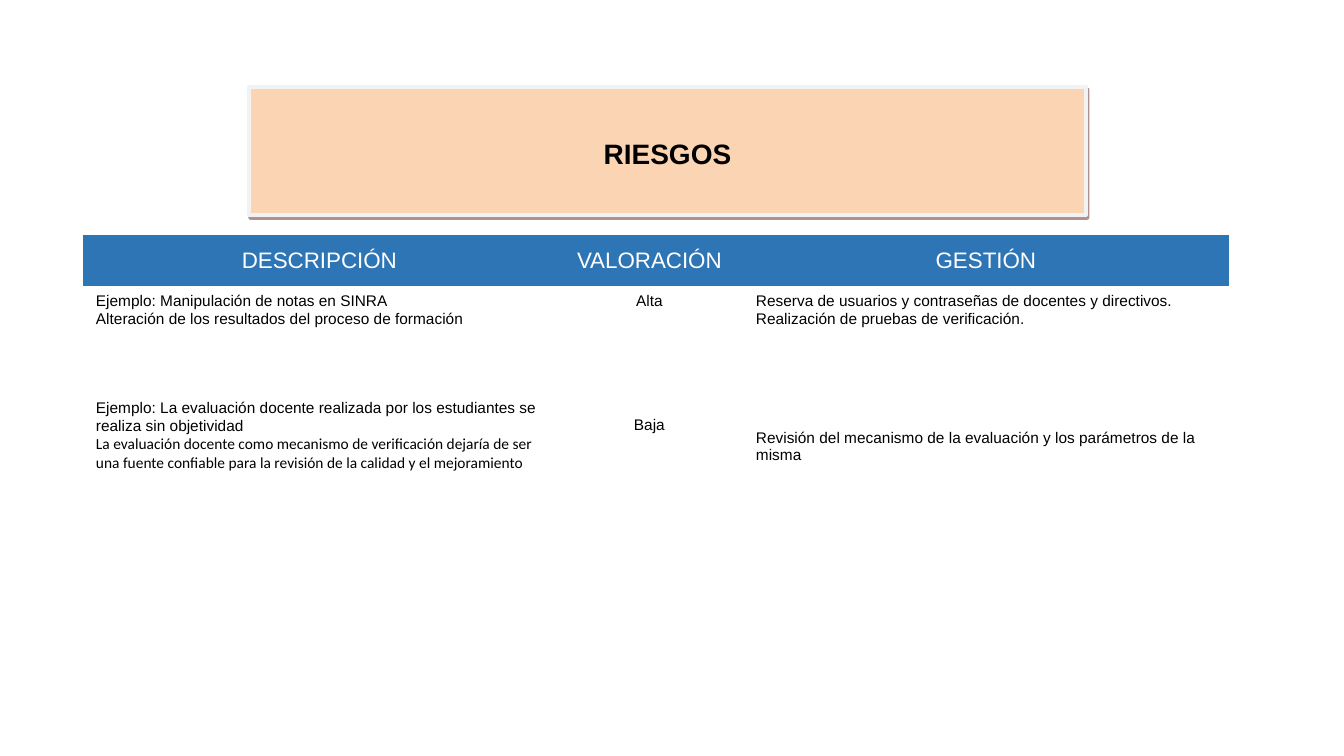
import pptx
import pptx.dml.color
import pptx.enum.text
import pptx.oxml
import pptx.oxml.ns
import pptx.util

PX = 914400 / 100.8
CENTER = pptx.enum.text.PP_ALIGN.CENTER
LEFT = pptx.enum.text.PP_ALIGN.LEFT
TOP = pptx.enum.text.MSO_ANCHOR.TOP
MIDDLE = pptx.enum.text.MSO_ANCHOR.MIDDLE
NO_GRID_STYLE = "{2D5ABB26-0587-4C30-8999-92F81FD0307C}"
COLUMN_WIDTHS = [473, 187, 486]
ROW_HEIGHTS = [51, 107, 107]
HEADINGS = ["DESCRIPCIÓN", "VALORACIÓN", "GESTIÓN"]
RISKS = [
    [
        [("Ejemplo: Manipulación de notas en SINRA", "Arial"),
         ("Alteración de los resultados del proceso de formación", "Arial")],
        [("Alta", "Arial")],
        [("Reserva de usuarios y contraseñas de docentes y directivos.", "Arial"),
         ("Realización de pruebas de verificación.", "Arial")],
    ],
    [
        [("Ejemplo: La evaluación docente realizada por los estudiantes se realiza sin objetividad", "Arial"),
         ("La evaluación docente como mecanismo de verificación dejaría de ser una fuente "
          "confiable para la revisión de la calidad y el mejoramiento", "Calibri")],
        [("Baja", "Arial")],
        [("Revisión del mecanismo de la evaluación y los parámetros de la misma", "Arial")],
    ],
]


def px(length):
    return pptx.util.Emu(round(length * PX))


def color(value):
    return pptx.dml.color.RGBColor.from_string(value)


def write(frame, lines, size=11, ink="000000", bold=False, align=LEFT, spacing=1.0):
    for index, (text, font) in enumerate(lines):
        paragraph = frame.paragraphs[0] if index == 0 else frame.add_paragraph()
        paragraph.alignment = align
        paragraph.line_spacing = spacing
        run = paragraph.add_run()
        run.text = text
        run.font.name = font
        run.font.size = pptx.util.Pt(size)
        run.font.bold = bold
        run.font.color.rgb = color(ink)


def add_banner(slide, left, top, width, height):
    banner = slide.shapes.title
    banner.left, banner.top, banner.width, banner.height = map(px, (left, top, width, height))
    banner.fill.solid()
    banner.fill.fore_color.rgb = color("FBD4B4")
    banner.line.color.rgb = color("F2F2F2")
    banner.line.width = pptx.util.Pt(3)
    shadow = pptx.oxml.parse_xml(
        f'<a:effectLst {pptx.oxml.ns.nsdecls("a")}>'
        '<a:outerShdw blurRad="0" dist="28000" dir="3800000" algn="ctr" rotWithShape="0">'
        '<a:srgbClr val="632423"><a:alpha val="49000"/></a:srgbClr>'
        '</a:outerShdw></a:effectLst>')
    banner.element.spPr.append(shadow)
    frame = banner.text_frame
    frame.word_wrap = True
    frame.auto_size = pptx.enum.text.MSO_AUTO_SIZE.NONE
    frame.vertical_anchor = MIDDLE
    frame.margin_left = frame.margin_right = px(10)
    frame.margin_top = frame.margin_bottom = px(5)
    write(frame, [("RIESGOS", "Arial")], size=20, bold=True, align=CENTER, spacing=1.15)


def fill_cell(cell, lines, fill=None, anchor=TOP, top=7, **text_format):
    cell.margin_left = cell.margin_right = px(13)
    cell.margin_top, cell.margin_bottom = px(top), px(7)
    cell.vertical_anchor = anchor
    if fill:
        cell.fill.solid()
        cell.fill.fore_color.rgb = color(fill)
    else:
        cell.fill.background()
    write(cell.text_frame, lines, **text_format)


def add_risk_table(slide, left, top):
    frame = slide.shapes.add_table(
        len(ROW_HEIGHTS), len(COLUMN_WIDTHS), px(left), px(top),
        px(sum(COLUMN_WIDTHS)), px(sum(ROW_HEIGHTS)))
    risks = frame.table
    frame.element.find(".//" + pptx.oxml.ns.qn("a:tableStyleId")).text = NO_GRID_STYLE
    risks.horz_banding = False
    for column, width in zip(risks.columns, COLUMN_WIDTHS):
        column.width = px(width)
    for row, height in zip(risks.rows, ROW_HEIGHTS):
        row.height = px(height)
    for column, heading in enumerate(HEADINGS):
        fill_cell(risks.cell(0, column), [(heading, "Arial")], fill="2E75B5",
                  anchor=MIDDLE, size=16, ink="FFFFFF", align=CENTER)
    for row, (description, rating, response) in enumerate(RISKS, 1):
        last = row == len(RISKS)
        fill_cell(risks.cell(row, 0), description)
        fill_cell(risks.cell(row, 1), rating, top=24 if last else 7, align=CENTER)
        fill_cell(risks.cell(row, 2), response, anchor=MIDDLE if last else TOP)


def main():
    deck = pptx.Presentation()
    deck.slide_width, deck.slide_height = px(1344), px(756)
    slide = deck.slides.add_slide(deck.slide_layouts[5])
    add_banner(slide, 249, 87, 837, 128)
    add_risk_table(slide, 83, 235)
    deck.save("out.pptx")


if __name__ == "__main__":
    main()
